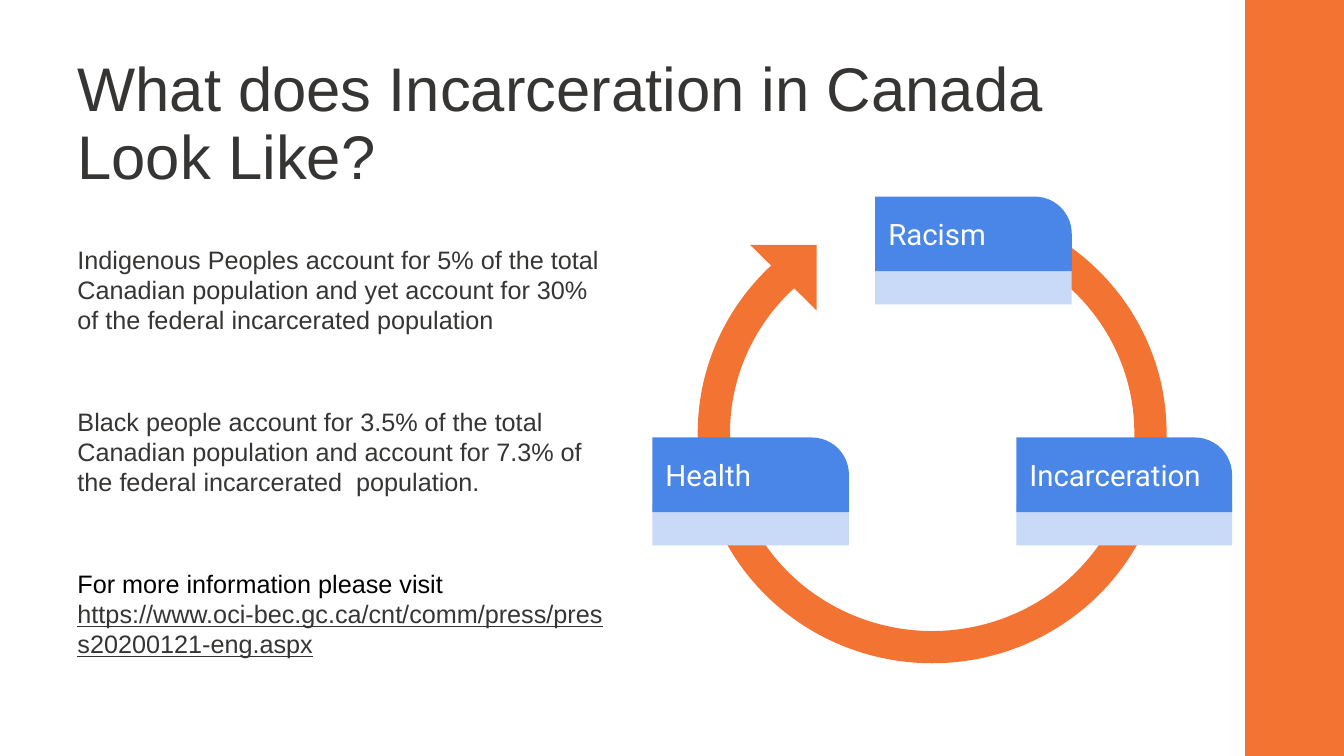
from pptx import Presentation
from pptx.dml.color import RGBColor
from pptx.enum.shapes import MSO_SHAPE
from pptx.enum.text import MSO_ANCHOR, PP_ALIGN
from pptx.util import Inches, Pt

THEME = {
    "orange": "F37432", "blue": "4A86E8", "pale": "C9DAF8",
    "ink": "363534", "black": "000000", "white": "FFFFFF",
    "title": 44, "body": 18, "label": 21,
    "font": "Arial", "label_font": "Roboto",
}


def add_shape(kind, x, y, w, h, color, rotation=0, adjustments=()):
    sp = s.shapes.add_shape(kind, Inches(x), Inches(y), Inches(w), Inches(h))
    sp.shadow.inherit = False
    sp.fill.solid()
    sp.fill.fore_color.rgb = RGBColor.from_string(THEME[color])
    sp.line.fill.background()
    sp.rotation = rotation
    for i, value in enumerate(adjustments):
        sp.adjustments[i] = value
    return sp


def add_text(p, text, size="body", font="font", color="ink", underline=None, spacing=1.0, before=0):
    p.alignment = PP_ALIGN.LEFT
    p.line_spacing = spacing
    p.space_before = Pt(before)
    r = p.add_run()
    r.text = text
    r.font.size = Pt(THEME[size])
    r.font.name = THEME[font]
    r.font.color.rgb = RGBColor.from_string(THEME[color])
    r.font.underline = underline


prs = Presentation()
prs.slide_width, prs.slide_height = Inches(13.33), Inches(7.5)
s = prs.slides.add_slide(prs.slide_layouts[6])

add_shape(MSO_SHAPE.RECTANGLE, 12.35, 0, 1, 7.5, "orange")

title = s.shapes.add_textbox(Inches(0.67), Inches(0.63), Inches(10.53), Inches(1.22))
tf = title.text_frame
tf.word_wrap = True
tf.vertical_anchor = MSO_ANCHOR.MIDDLE
add_text(tf.paragraphs[0], "What does Incarceration in Canada Look Like?", size="title", spacing=0.93)

body = s.shapes.add_textbox(Inches(0.67), Inches(2.37), Inches(5.52), Inches(4.33))
tf = body.text_frame
tf.word_wrap = True
add_text(tf.paragraphs[0], "Indigenous Peoples account for 5% of the total Canadian population "
         "and yet account for 30% of the federal incarcerated population")
add_text(tf.add_paragraph(), "Black people account for 3.5% of the total Canadian population "
         "and account for 7.3% of the federal incarcerated  population.", before=51)
p = tf.add_paragraph()
add_text(p, "For more information please visit ", color="black", before=51)
add_text(p, "https://www.oci-bec.gc.ca/cnt/comm/press/press20200121-eng.aspx",
         underline=True, before=51)

add_shape(MSO_SHAPE.BLOCK_ARC, 6.92, 2.01, 4.65, 4.57, "orange", 180, (54, 30.13, 0.07))
add_shape(MSO_SHAPE.RIGHT_TRIANGLE, 7.44, 2.43, 0.66, 0.65, "orange", 180)

for label, x, y, w in (
    ("Racism", 8.68, 1.95, 1.95),
    ("Incarceration", 10.08, 4.34, 2.14),
    ("Health", 6.47, 4.34, 1.95),
):
    add_shape(MSO_SHAPE.RECTANGLE, x, y + 0.65, w, 0.42, "pale")
    card = add_shape(MSO_SHAPE.ROUND_1_RECTANGLE, x, y, w, 0.74, "blue", adjustments=(0.5,))
    tf = card.text_frame
    tf.word_wrap = True
    tf.vertical_anchor = MSO_ANCHOR.MIDDLE
    tf.margin_left = tf.margin_right = tf.margin_top = tf.margin_bottom = Inches(0.13)
    add_text(tf.paragraphs[0], label, size="label", font="label_font", color="white")

prs.save("out.pptx")
